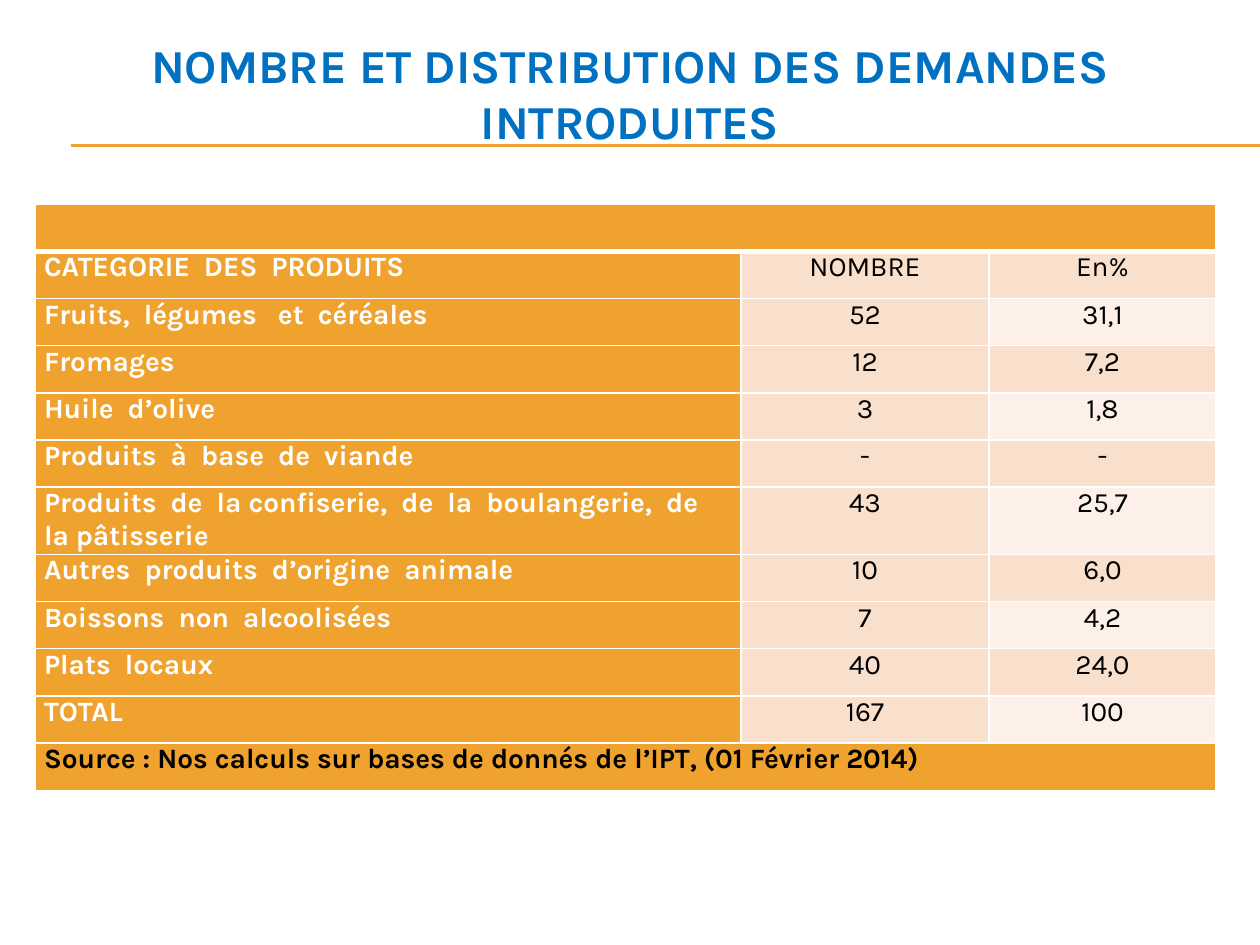
"""Build the slide on the number and distribution of submitted requests."""
from lxml.etree import SubElement
from pptx import Presentation
from pptx.dml.color import RGBColor
from pptx.enum.shapes import MSO_CONNECTOR
from pptx.enum.text import MSO_ANCHOR as Anchor, PP_ALIGN as Align
from pptx.oxml import parse_xml
from pptx.oxml.ns import nsdecls, qn
from pptx.util import Inches, Pt

ORANGE, PEACH, CREAM = "F0A22E", "F9E0CD", "FCF0E8"
WHITE, BLACK, BLUE = "FFFFFF", "000000", "0070C0"


def color(value):
    return RGBColor.from_string(value)


def write(frame, text, size, font_color, bold, alignment):
    paragraph = frame.paragraphs[0]
    paragraph.alignment = alignment
    run = paragraph.add_run()
    run.text = text
    font_format = {"name": "Karla", "size": Pt(size), "bold": bold}
    for name, value in font_format.items():
        setattr(run.font, name, value)
    run.font.color.rgb = color(font_color)


presentation = Presentation()
presentation.slide_width = Inches(10)
presentation.slide_height = Inches(7.5)
slide = presentation.slides.add_slide(presentation.slide_layouts[6])

for y in (1.15, 1.16):
    rule = slide.shapes.add_connector(
        MSO_CONNECTOR.STRAIGHT, Inches(0.56), Inches(y), Inches(10), Inches(y))
    rule.line.color.rgb = color(ORANGE)
    rule.line.width = Pt(0.75)
    SubElement(rule._element.spPr, qn("a:effectLst"))

title = slide.shapes.add_textbox(0, 0, Inches(10), Inches(1.47))
title.text_frame.word_wrap = True
title.text_frame.vertical_anchor = Anchor.MIDDLE
write(title.text_frame, "NOMBRE ET DISTRIBUTION DES DEMANDES INTRODUITES",
      27, BLUE, True, Align.CENTER)

rows = [
    ("", "", ""),
    ("CATEGORIE  DES  PRODUITS", "NOMBRE", "En%"),
    ("Fruits,  légumes   et  céréales", "52", "31,1"),
    ("Fromages", "12", "7,2"),
    ("Huile  d’olive", "3", "1,8"),
    ("Produits  à  base  de  viande", "-", "-"),
    ("Produits  de  la confiserie,  de  la  boulangerie,  de  la pâtisserie", "43", "25,7"),
    ("Autres  produits  d’origine  animale", "10", "6,0"),
    ("Boissons  non  alcoolisées", "7", "4,2"),
    ("Plats  locaux", "40", "24,0"),
    ("TOTAL", "167", "100"),
    ("Source : Nos calculs sur bases de donnés de l’IPT, (01 Février 2014)", "", ""),
]
last_row = len(rows) - 1
tall_row = 6
column_widths = (5.6, 1.97, 1.8)
row_height = 4.12 / last_row
cell_format = {"margin_left": Inches(0.07), "margin_right": Inches(0.07),
               "margin_top": 0, "margin_bottom": 0, "vertical_anchor": Anchor.TOP}

table = slide.shapes.add_table(
    len(rows), len(column_widths), Inches(0.28), Inches(1.62),
    Inches(sum(column_widths)), Inches(4.64)).table
for column, width in zip(table.columns, column_widths):
    column.width = Inches(width)

for row_index, texts in enumerate(rows):
    table.rows[row_index].height = Inches(0.52 if row_index == tall_row else row_height)
    full_width = row_index in (0, last_row)
    for column_index, text in enumerate(texts):
        cell = table.cell(row_index, column_index)
        for name, value in cell_format.items():
            setattr(cell, name, value)
        for side in "LRTB":
            thick = (row_index, side) in ((0, "B"), (1, "T"))
            cell._tc.get_or_add_tcPr().append(parse_xml(
                f'<a:ln{side} {nsdecls("a")} w="{Pt(3 if thick else 1)}"><a:solidFill>'
                f'<a:srgbClr val="{WHITE}"/></a:solidFill></a:ln{side}>'))
        is_label = column_index == 0
        light = column_index == 2 and row_index % 2 == 0
        cell.fill.solid()
        cell.fill.fore_color.rgb = color(
            ORANGE if is_label or full_width else CREAM if light else PEACH)
        if text:
            write(cell.text_frame, text, 16,
                  WHITE if is_label and not full_width else BLACK,
                  is_label, Align.LEFT if is_label else Align.CENTER)

for row_index in (0, last_row):
    table.cell(row_index, 0).merge(table.cell(row_index, 2))

presentation.save("out.pptx")
